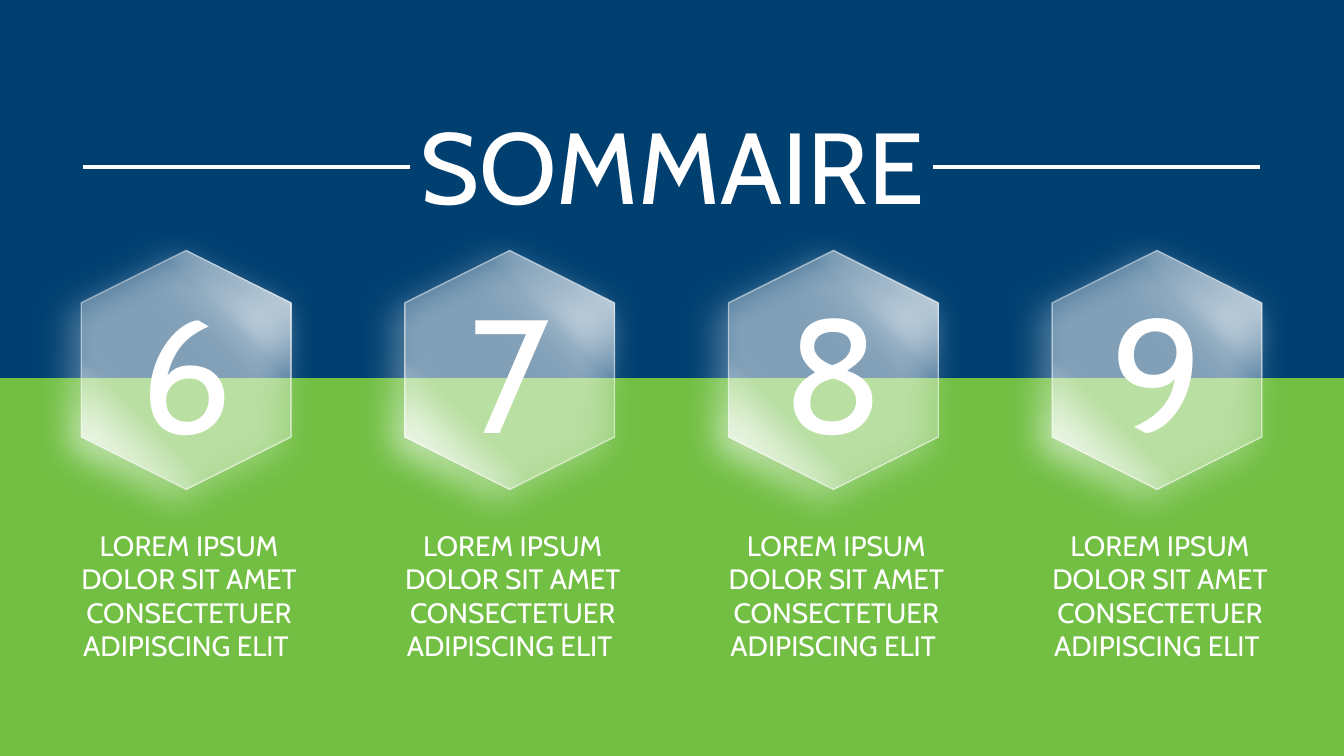
"""Build the summary slide with four numbered glass hexagons."""
import dataclasses

import pptx
import pptx.dml.color
import pptx.enum.dml
import pptx.enum.shapes
import pptx.enum.text
import pptx.oxml
import pptx.oxml.ns
import pptx.util

Inches = pptx.util.Inches
Kind = pptx.enum.shapes.MSO_SHAPE
NS = pptx.oxml.ns.nsdecls("a")


@dataclasses.dataclass(frozen=True)
class Theme:
    """Colours, font and type sizes."""
    blue: str = "004071"
    green: str = "72BF44"
    white: str = "FFFFFF"
    font: str = "Cabin"
    title: float = 72
    digit: float = 115
    body: float = 20


@dataclasses.dataclass(frozen=True)
class Box:
    """A place on the slide in inches."""
    left: float
    top: float
    width: float
    height: float

    def area(self) -> tuple:
        """Return the four lengths."""
        return tuple(Inches(n) for n in dataclasses.astuple(self))


@dataclasses.dataclass(frozen=True)
class Item:
    """A numbered entry of the summary."""
    digit: str
    left: float
    text: str = "LOREM IPSUM\vDOLOR SIT AMET CONSECTETUER ADIPISCING ELIT "


@dataclasses.dataclass(frozen=True)
class Rule:
    """A level line beside the title."""
    start: float
    end: float
    top: float = 1.66


THEME = Theme()
PITCH = 3.21
BANDS = [(Box(0, 0, 13.33, 4.58), THEME.blue), (Box(0, 3.75, 13.33, 3.75), THEME.green)]
ITEMS = [Item(str(6 + i), 0.33 + i * PITCH) for i in range(4)]
RULES = [Rule(9.25, 12.5), Rule(0.82, 4.07)]
STOPS = [(0, 100), (30, 30), (70, 30), (100, 100)]


def paint(code: str) -> pptx.dml.color.RGBColor:
    """Turn a hex code into a colour."""
    return pptx.dml.color.RGBColor.from_string(code)


def tint(alpha: int) -> str:
    """Return white at a given opacity as XML."""
    return f'<a:srgbClr val="{THEME.white}"><a:alpha val="{alpha * 1000}"/></a:srgbClr>'


def band(shapes, box: Box, code: str) -> None:
    """Draw a plain background band."""
    shape = shapes.add_shape(Kind.RECTANGLE, *box.area())
    shape.shadow.inherit = False
    shape.fill.solid()
    shape.fill.fore_color.rgb = paint(code)
    shape.line.fill.background()


def label(shapes, box: Box, text: str, size: float) -> None:
    """Draw centred white text."""
    frame = shapes.add_textbox(*box.area()).text_frame
    frame.word_wrap = True
    frame.auto_size = pptx.enum.text.MSO_AUTO_SIZE.SHAPE_TO_FIT_TEXT
    para = frame.paragraphs[0]
    para.text = text
    para.alignment = pptx.enum.text.PP_ALIGN.CENTER
    for run in para.runs:
        run.font.name = THEME.font
        run.font.size = pptx.util.Pt(size)
        run.font.color.rgb = paint(THEME.white)


def glass(shapes, box: Box) -> None:
    """Draw an upright hexagon with a glassy fill and a glow."""
    shape = shapes.add_shape(Kind.HEXAGON, *box.area())
    shape.rotation = 90
    shape.shadow.inherit = False
    shape.fill.background()
    props = shape._element.spPr
    stops = "".join(f'<a:gs pos="{pos * 1000}">{tint(alpha)}</a:gs>' for pos, alpha in STOPS)
    blend = pptx.oxml.parse_xml(
        f'<a:gradFill {NS} rotWithShape="1"><a:gsLst>{stops}</a:gsLst>'
        '<a:lin ang="2700000" scaled="0"/></a:gradFill>')
    props.replace(props.find(pptx.oxml.ns.qn("a:noFill")), blend)
    shape.line.width = pptx.util.Pt(1)
    shape.line.fill.solid()
    edge = pptx.oxml.parse_xml(f'<a:solidFill {NS}>{tint(50)}</a:solidFill>')
    line = props.find(pptx.oxml.ns.qn("a:ln"))
    line.replace(line.find(pptx.oxml.ns.qn("a:solidFill")), edge)
    blur, dist = pptx.util.Pt(24), pptx.util.Pt(11)
    glow = pptx.oxml.parse_xml(
        f'<a:outerShdw {NS} blurRad="{blur}" dist="{dist}" dir="8100000" '
        f'algn="tr" rotWithShape="0">{tint(100)}</a:outerShdw>')
    props.find(pptx.oxml.ns.qn("a:effectLst")).append(glow)


def entry(shapes, item: Item) -> None:
    """Draw one summary entry as a group."""
    group = shapes.add_group_shape().shapes
    label(group, Box(item.left, 5.19, 3.09, 1.45), item.text, THEME.body)
    glass(group, Box(item.left + 0.33, 2.63, 2.37, 2.08))
    label(group, Box(item.left + 0.34, 2.65, 2.36, 2.04), item.digit, THEME.digit)


def stroke(shapes, rule: Rule) -> None:
    """Draw a white line."""
    top = Inches(rule.top)
    line = shapes.add_connector(pptx.enum.shapes.MSO_CONNECTOR.STRAIGHT,
                                Inches(rule.start), top, Inches(rule.end), top)
    line.line.color.rgb = paint(THEME.white)
    line.line.width = pptx.util.Pt(3)
    line._element.spPr.append(pptx.oxml.parse_xml(f"<a:effectLst {NS}/>"))


def main() -> None:
    """Build and save the deck."""
    deck = pptx.Presentation()
    deck.slide_width, deck.slide_height = Inches(13.33), Inches(7.5)
    shapes = deck.slides.add_slide(deck.slide_layouts[6]).shapes
    for box, code in BANDS:
        band(shapes, box, code)
    for item in reversed(ITEMS):
        entry(shapes, item)
    for rule in RULES:
        stroke(shapes, rule)
    label(shapes, Box(0, 0.98, 13.34, 1.31), "SOMMAIRE", THEME.title)
    deck.save("out.pptx")


if __name__ == "__main__":
    main()
